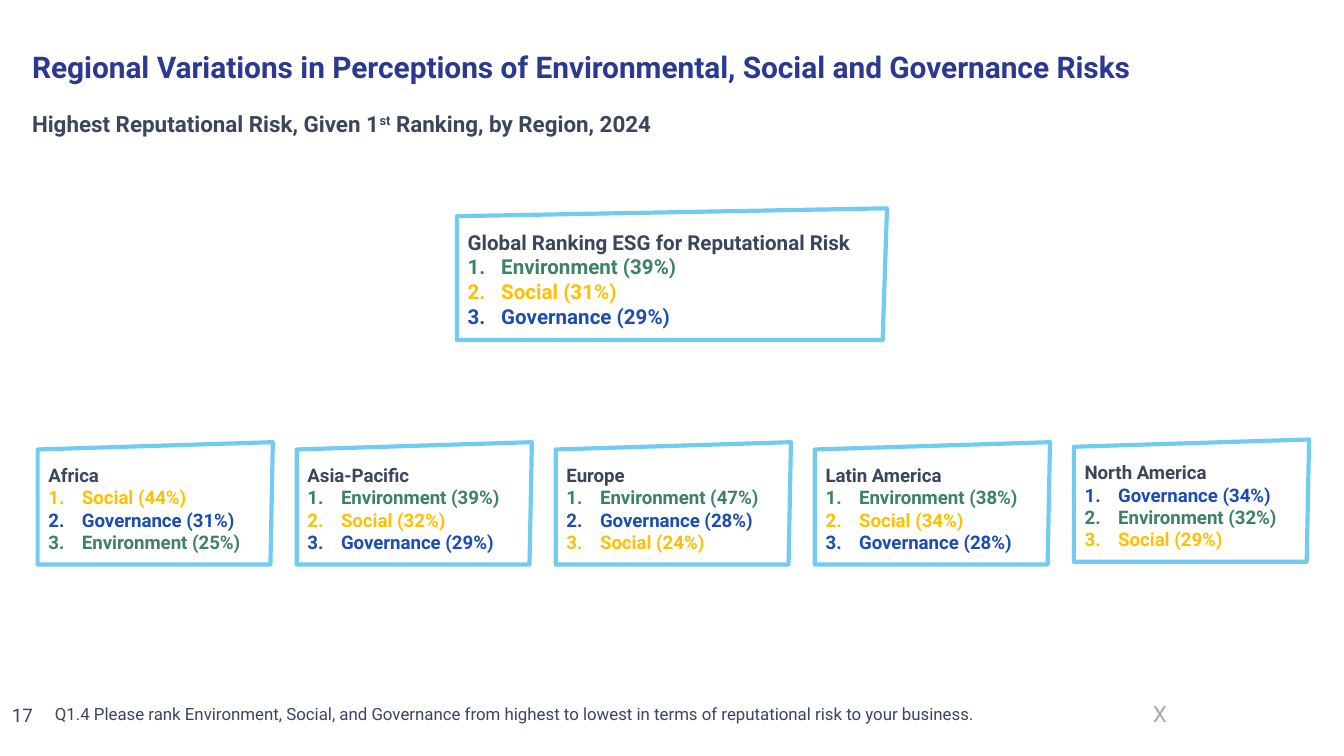
from lxml import etree
from pptx import Presentation
from pptx.dml.color import RGBColor
from pptx.enum.text import MSO_ANCHOR, PP_ALIGN
from pptx.oxml.ns import qn
from pptx.util import Inches, Pt

TOP = MSO_ANCHOR.TOP
LEFT = PP_ALIGN.LEFT

FONT = "Roboto"
COLORS = {
    "title": "2B3990",
    "text": "3B455B",
    "muted": "A8AAAC",
    "frame": "72CCF0",
    "Environment": "3D8264",
    "Social": "FFC000",
    "Governance": "1B4DB3",
}

GLOBAL_RANKING = [("Environment", 39), ("Social", 31), ("Governance", 29)]
REGIONAL_RANKINGS = [
    ("Africa", 3.29, [("Social", 44), ("Governance", 31), ("Environment", 25)]),
    ("Asia-Pacific", 3.29, [("Environment", 39), ("Social", 32), ("Governance", 29)]),
    ("Europe", 3.29, [("Environment", 47), ("Governance", 28), ("Social", 24)]),
    ("Latin America", 3.29, [("Environment", 38), ("Social", 34), ("Governance", 28)]),
    ("North America", 3.27, [("Governance", 34), ("Environment", 32), ("Social", 29)]),
]
FIRST_REGION_LEFT, LAST_REGION_LEFT = 0.28, 7.99


def add_run(paragraph, text, size=10, color="text", bold=False, superscript=False):
    run = paragraph.add_run()
    run.text = text
    run.font.name = FONT
    run.font.size = Pt(size)
    run.font.bold = bold
    run.font.color.rgb = RGBColor.from_string(COLORS[color])
    if superscript:
        run._r.get_or_add_rPr().set("baseline", "30000")


def add_label(slide, left, top, width, height, text="", wrap=True, **style):
    label = slide.shapes.add_textbox(
        Inches(left), Inches(top), Inches(width), Inches(height))
    label.text_frame.word_wrap = wrap
    paragraph = label.text_frame.paragraphs[0]
    if text:
        add_run(paragraph, text, **style)
    return paragraph


def number_paragraph(paragraph):
    properties = paragraph._p.get_or_add_pPr()
    properties.set("marL", str(Inches(0.25)))
    properties.set("indent", str(-Inches(0.25)))
    numbering = etree.SubElement(properties, qn("a:buAutoNum"))
    numbering.set("type", "arabicPeriod")


def add_frame(slide, left, top, width, height):
    right, bottom = left + width, top + height
    corners = [
        (left, top + 0.06 * height),
        (right, top),
        (right - 0.01 * width, bottom),
        (left, bottom),
    ]
    points = [(Inches(x), Inches(y)) for x, y in corners]
    builder = slide.shapes.build_freeform(*points[0])
    builder.add_line_segments(points[1:], close=True)
    frame = builder.convert_to_shape()
    frame.shadow.inherit = False
    frame.fill.background()
    frame.line.color.rgb = RGBColor.from_string(COLORS["frame"])
    frame.line.width = Pt(2.25)
    return frame


def add_ranking(slide, left, top, width, height, heading, ranking, size):
    body = add_frame(slide, left, top, width, height).text_frame
    body.word_wrap = True
    body.vertical_anchor = TOP
    body.margin_left = body.margin_right = body.margin_bottom = Inches(0.08)
    body.margin_top = Inches(0.16)
    heading_line = body.paragraphs[0]
    heading_line.alignment = LEFT
    add_run(heading_line, heading, size=size, bold=True)
    for risk, share in ranking:
        entry = body.add_paragraph()
        entry.alignment = LEFT
        number_paragraph(entry)
        add_run(entry, f"{risk} ({share}%)", size=size, color=risk, bold=True)


def main():
    deck = Presentation()
    deck.slide_width = Inches(10)
    deck.slide_height = deck.slide_width * 9 // 16
    slide = deck.slides.add_slide(deck.slide_layouts[6])

    add_label(slide, 8.48, 5.16, 0.3, 0.3, "X", wrap=False, size=12, color="muted")
    add_label(slide, -0.01, 5.19, 0.39, 0.28, "17")
    add_label(slide, 0.31, 5.19, 7.32, 0.25,
              "Q1.4 Please rank Environment, Social, and Governance from highest "
              "to lowest in terms of reputational risk to your business.", size=9)

    region_step = (LAST_REGION_LEFT - FIRST_REGION_LEFT) / (len(REGIONAL_RANKINGS) - 1)
    for column, (region, top, ranking) in enumerate(REGIONAL_RANKINGS):
        add_ranking(slide, FIRST_REGION_LEFT + column * region_step, top, 1.75, 0.91,
                    region, ranking, size=10)

    subtitle = add_label(slide, 0.14, 0.77, 9.47, 0.3)
    add_run(subtitle, "Highest Reputational Risk, Given 1", size=12, bold=True)
    add_run(subtitle, "st", size=12, bold=True, superscript=True)
    add_run(subtitle, " Ranking, by Region, 2024", size=12, bold=True)
    add_label(slide, 0.14, 0.31, 9.72, 0.37,
              "Regional Variations in Perceptions of Environmental, Social and "
              "Governance Risks", size=16, color="title", bold=True)

    add_ranking(slide, 3.4, 1.55, 3.2, 0.98,
                "Global Ranking ESG for Reputational Risk", GLOBAL_RANKING, size=11)

    deck.save("out.pptx")


if __name__ == "__main__":
    main()
